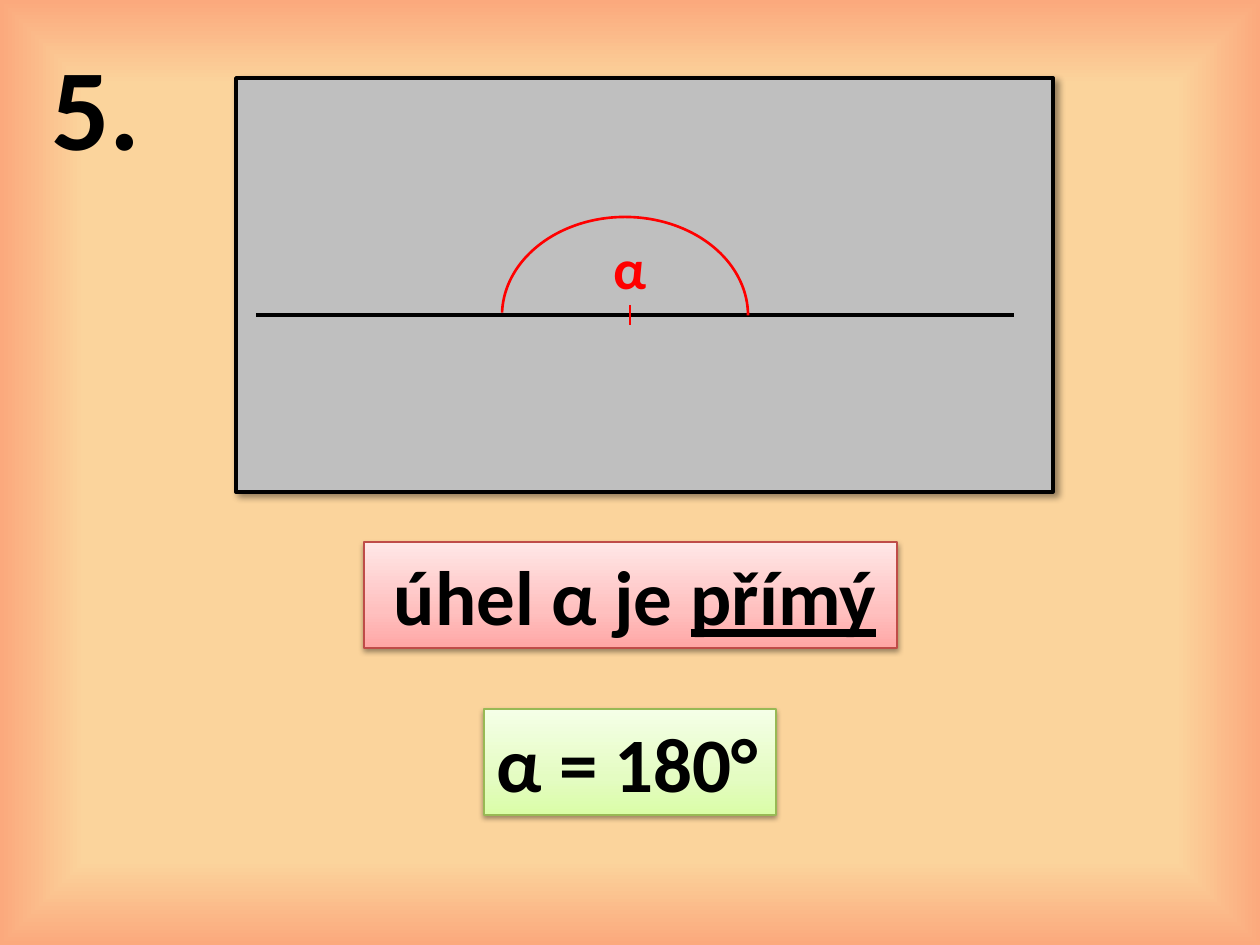
"""Build a slide on the straight angle with a labelled diagram and two captions."""
from lxml import etree
from pptx import Presentation
from pptx import util as u
from pptx.dml.color import RGBColor
from pptx.enum import shapes, text
from pptx.oxml import parse_xml
from pptx.oxml.ns import nsdecls, qn

PX = 914400 / 126
BLACK = RGBColor(0x00, 0x00, 0x00)
RED = RGBColor(0xFF, 0x00, 0x00)
GREY = RGBColor(0xBF, 0xBF, 0xBF)
PEACH = RGBColor(0xFB, 0xD4, 0x9C)
CORAL = RGBColor(0xFB, 0xA9, 0x7D)
ROSE_LINE = RGBColor(0xBF, 0x4C, 0x48)
ROSE = [(0, RGBColor(0xFF, 0xA6, 0xA5)), (35, RGBColor(0xFF, 0xC0, 0xBF)),
        (100, RGBColor(0xFF, 0xE7, 0xE7))]
LIME_LINE = RGBColor(0x98, 0xB9, 0x55)
LIME = [(0, RGBColor(0xDA, 0xFD, 0xA7)), (35, RGBColor(0xE4, 0xFC, 0xC2)),
        (100, RGBColor(0xF5, 0xFF, 0xE7))]


def set_gradient(fill, grad, stops, direction):
    fill.gradient()
    for child in list(grad):
        grad.remove(child)
    gs = "".join(f'<a:gs pos="{pos * 1000}"><a:srgbClr val="{color}"/></a:gs>'
                 for pos, color in stops)
    grad.append(parse_xml(f'<a:gsLst {nsdecls("a")}>{gs}</a:gsLst>'))
    grad.append(parse_xml(direction))


def add_shadow(sp, alpha, blur, dist, angle):
    sp.shadow.inherit = False
    effects = sp._element.spPr.find(qn("a:effectLst"))
    shadow = etree.SubElement(effects, qn("a:outerShdw"), blurRad=str(u.Pt(blur)),
                              dist=str(u.Pt(dist)), dir=str(angle * 60000),
                              rotWithShape="0")
    color = etree.SubElement(shadow, qn("a:srgbClr"), val=str(BLACK))
    etree.SubElement(color, qn("a:alpha"), val=str(alpha * 1000))


prs = Presentation()
prs.slide_width, prs.slide_height = int(1260 * PX), int(945 * PX)
s = prs.slides.add_slide(prs.slide_layouts[6])

fill = s.background.fill
fill.gradient()
set_gradient(fill, s.background._cSld.find(".//" + qn("a:gradFill")),
             [(0, PEACH), (82, PEACH), (100, CORAL)],
             f'<a:path {nsdecls("a")} path="rect">'
             '<a:fillToRect l="50000" t="50000" r="50000" b="50000"/></a:path>')

panel = s.shapes.add_shape(shapes.MSO_SHAPE.RECTANGLE,
                           *[int(v * PX) for v in (236, 78, 817, 414)])
panel.fill.solid()
panel.fill.fore_color.rgb = GREY
panel.line.color.rgb = BLACK
panel.line.width = u.Pt(2)
add_shadow(panel, 40, 4, 3, 45)

for x1, y1, x2, y2, color, width in [
    (256, 315, 669, 315, BLACK, 1.75),
    (1014, 315, 669, 315, BLACK, 1.75),
    (630, 305, 630, 325, RED, 1.5),
]:
    ray = s.shapes.add_connector(shapes.MSO_CONNECTOR.STRAIGHT,
                                 *[int(v * PX) for v in (x1, y1, x2, y2)])
    ray.line.color.rgb = color
    ray.line.width = u.Pt(width)
    etree.SubElement(ray._element.spPr, qn("a:effectLst"))

arc = s.shapes.add_shape(shapes.MSO_SHAPE.ARC,
                         *[int(v * PX) for v in (502, 217, 246, 197)])
arc.adjustments[0] = 108.8
arc.adjustments[1] = 0
arc.fill.background()
arc.line.color.rgb = RED
arc.line.width = u.Pt(1.5)
arc.shadow.inherit = False

for box, runs, size, color, stops, edge in [
    ((39, 29, 116, 152), [("5.", False)], 66, BLACK, None, None),
    ((601, 227, 62, 81), [("α", False)], 32, RED, None, None),
    ((364, 542, 533, 106), [(" úhel α je ", False), ("přímý", True)], 44, BLACK,
     ROSE, ROSE_LINE),
    ((484, 709, 292, 106), [("α = 180°", False)], 44, BLACK, LIME, LIME_LINE),
]:
    sp = s.shapes.add_textbox(*[int(v * PX) for v in box])
    tf = sp.text_frame
    tf.word_wrap = False
    tf.auto_size = text.MSO_AUTO_SIZE.SHAPE_TO_FIT_TEXT
    p = tf.paragraphs[0]
    for words, underlined in runs:
        r = p.add_run()
        r.text = words
        r.font.name = "Calibri"
        r.font.size = u.Pt(size)
        r.font.bold = True
        r.font.color.rgb = color
        if underlined:
            r.font.underline = True
    if stops:
        sp.fill.gradient()
        set_gradient(sp.fill, sp._element.spPr.find(qn("a:gradFill")), stops,
                     f'<a:lin {nsdecls("a")} ang="16200000" scaled="1"/>')
        sp.line.color.rgb = edge
        sp.line.width = u.Pt(0.75)
        add_shadow(sp, 38, 3.1, 1.6, 90)

prs.save("out.pptx")
